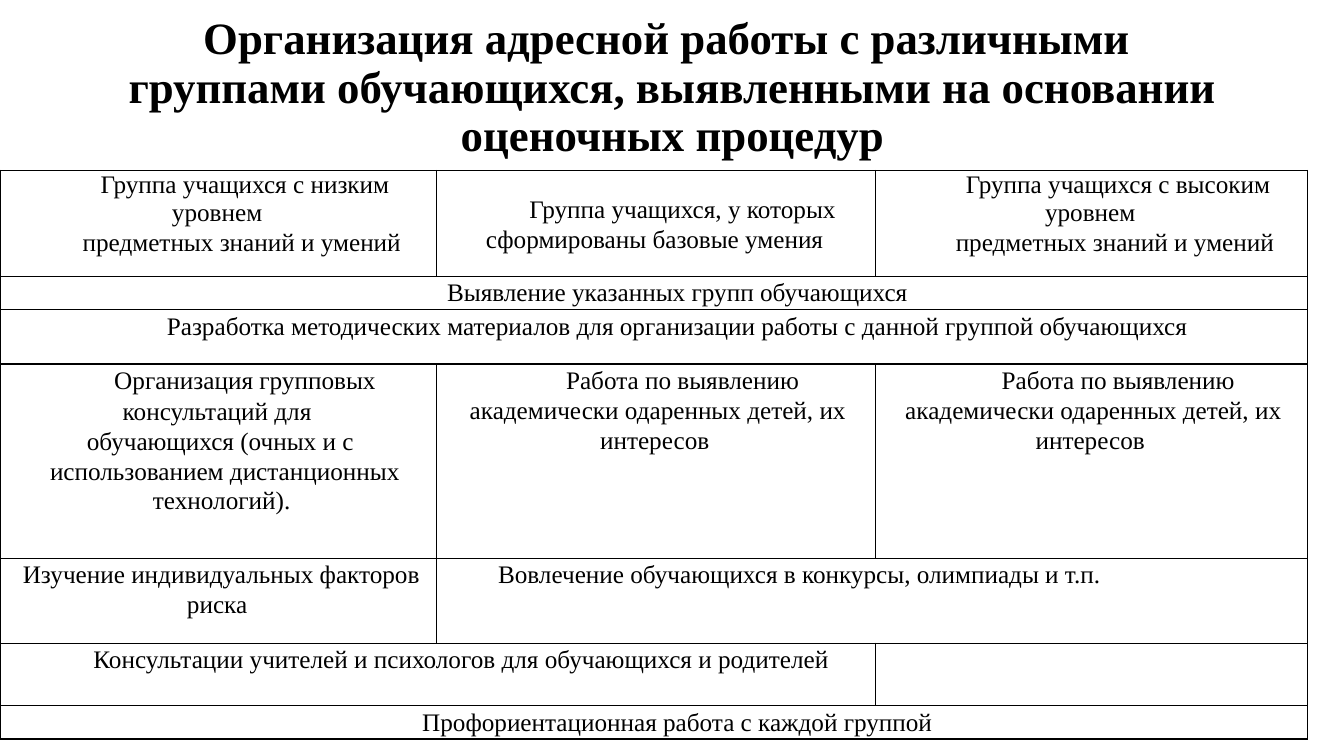
from lxml.etree import SubElement
from pptx import Presentation
from pptx.dml.color import RGBColor
from pptx.enum.text import MSO_ANCHOR, PP_ALIGN
from pptx.oxml.ns import qn
from pptx.util import Inches, Pt

FONT = "Times New Roman"
BLACK = "000000"
FIRST_LINE = (0, 0.49)
COLUMNS = [4.33, 4.35, 4.29]
ROWS = [1.05, 0.3, 0.54, 1.93, 0.84, 0.62, 0.3]


def color(value):
    return RGBColor.from_string(value)


def line(text, spacing=1.07, indent=FIRST_LINE, after=0, align=PP_ALIGN.CENTER):
    return text, spacing, indent, after, align


def level_group(level):
    return [line(f"Группа учащихся с {level} уровнем ", 0.99, after=0.1),
            line("предметных знаний и умений ")]


GIFTED = [line("Работа по выявлению академически одаренных детей, их интересов ")]

CELLS = [
    (0, 0, 1, level_group("низким")),
    (0, 1, 1, [line("Группа учащихся, у которых сформированы базовые умения ")]),
    (0, 2, 1, level_group("высоким")),
    (1, 0, 3, [line("Выявление указанных групп обучающихся ")]),
    (2, 0, 3, [line("Разработка методических материалов для организации "
                    "работы с данной группой обучающихся ")]),
    (3, 0, 1, [line("Организация групповых консультаций для ", 1.09),
               line("обучающихся (очных и с использованием дистанционных "
                    "технологий). ", indent=(0.09, -0.09))]),
    (3, 1, 1, GIFTED),
    (3, 2, 1, GIFTED),
    (4, 0, 1, [line("Изучение индивидуальных факторов риска ", indent=(0, 0.02))]),
    (4, 1, 2, [line("Вовлечение обучающихся в конкурсы, олимпиады и т.п.",
                    indent=(0.03, 0.49), after=0.8, align=PP_ALIGN.LEFT)]),
    (5, 0, 2, [line("Консультации учителей и психологов для обучающихся и родителей ")]),
    (6, 0, 3, [line("Профориентационная работа с каждой группой ")]),
]


def add_span(para, text, size, bold=False):
    span = para.add_run()
    span.text = text
    span.font.name = FONT
    span.font.size = Pt(size)
    span.font.bold = bold
    span.font.color.rgb = color(BLACK)


def add_title(page, left, top, width, height):
    box = page.shapes.add_textbox(Inches(left), Inches(top), Inches(width), Inches(height))
    frame = box.text_frame
    frame.word_wrap = True
    frame.vertical_anchor = MSO_ANCHOR.MIDDLE
    frame.margin_top = 0
    frame.margin_bottom = Inches(0.49)
    para = frame.paragraphs[0]
    para.alignment = PP_ALIGN.CENTER
    para.line_spacing = 0.9
    add_span(para, "Организация адресной работы с различными ", 32, True)
    para.add_line_break()
    add_span(para, "группами обучающихся, выявленными на основании оценочных процедур",
             32, True)


def style_cell(cell):
    properties = cell._tc.get_or_add_tcPr()
    for side in ("a:lnL", "a:lnR", "a:lnT", "a:lnB"):
        border = SubElement(properties, qn(side), w=str(Pt(1)))
        fill = SubElement(border, qn("a:solidFill"))
        SubElement(fill, qn("a:srgbClr"), val=BLACK)
    cell.fill.background()
    cell.margin_left = Inches(0.09)
    cell.margin_top = Inches(0.01)
    cell.margin_right = Inches(0.05)
    cell.margin_bottom = 0


def fill_cell(cell, lines):
    frame = cell.text_frame
    for index, (text, spacing, (margin, indent), after, align) in enumerate(lines):
        para = frame.add_paragraph() if index else frame.paragraphs[0]
        para.alignment = align
        para.line_spacing = spacing
        para.space_after = Pt(after)
        properties = para._p.get_or_add_pPr()
        properties.set("marL", str(Inches(margin)))
        properties.set("indent", str(Inches(indent)))
        add_span(para, text, 18)


def add_work_table(page, left, top, width, height):
    table = page.shapes.add_table(len(ROWS), len(COLUMNS), Inches(left), Inches(top),
                                  Inches(width), Inches(height)).table
    table.first_row = False
    table.horz_banding = False
    for column, size in zip(table.columns, COLUMNS):
        column.width = Inches(size)
    for row, size in zip(table.rows, ROWS):
        row.height = Inches(size)
    for cell in table.iter_cells():
        style_cell(cell)
    for row, column, columns, lines in CELLS:
        cell = table.cell(row, column)
        if columns > 1:
            cell.merge(table.cell(row, column + columns - 1))
        fill_cell(cell, lines)
    table.cell(0, 1).vertical_anchor = MSO_ANCHOR.MIDDLE


def main():
    deck = Presentation()
    deck.slide_width = Inches(13.33)
    deck.slide_height = Inches(7.5)
    page = deck.slides.add_slide(deck.slide_layouts[6])
    add_title(page, 0.92, 0.4, 11.5, 1.45)
    add_work_table(page, 0, 1.69, sum(COLUMNS), sum(ROWS))
    deck.save("out.pptx")


if __name__ == "__main__":
    main()
